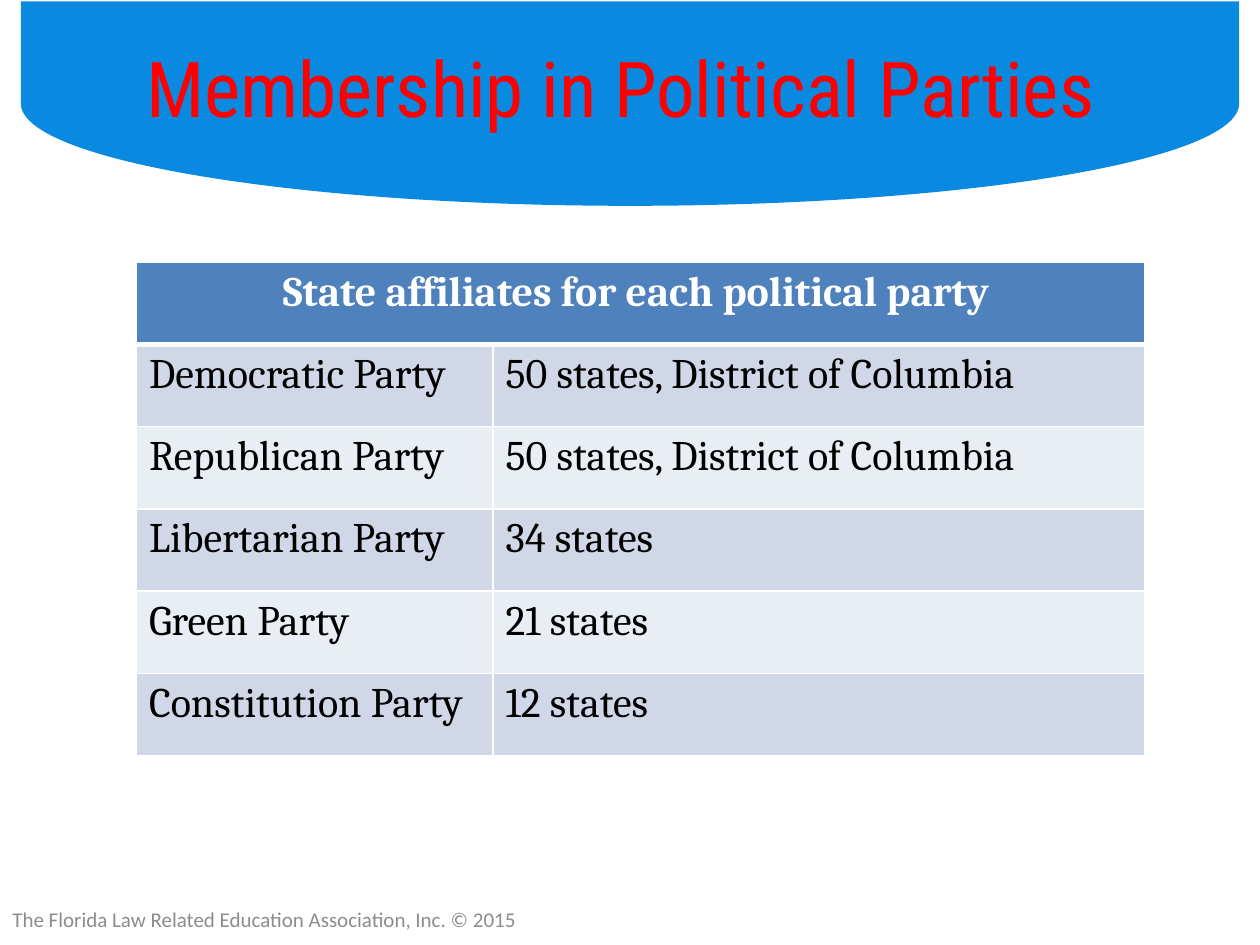
"""Build the slide on state affiliates of each political party."""
from dataclasses import dataclass

from lxml import etree
from pptx import Presentation
from pptx import util as u
from pptx.dml.color import RGBColor
from pptx.enum import shapes, text
from pptx.oxml import ns


@dataclass(frozen=True)
class Theme:
    banner: str = "0A89E0"
    title: str = "FF0000"
    footer: str = "8C8C8C"
    header: str = "4F81BD"
    bands: tuple = ("D0D8E8", "E9EDF4")
    light: str = "FFFFFF"
    dark: str = "000000"
    title_size: int = 44
    table_size: int = 24
    footer_size: int = 12
    title_font: str = "Roboto Condensed"
    table_font: str = "Cambria"
    footer_font: str = "Calibri"


def write(frame, words, font, size, color, align=text.PP_ALIGN.LEFT, bold=False):
    frame.text = words
    frame.word_wrap = True
    paragraph = frame.paragraphs[0]
    paragraph.alignment = align
    for run in paragraph.runs:
        run.font.name = font
        run.font.size = u.Pt(size)
        run.font.bold = bold
        run.font.color.rgb = RGBColor.from_string(color)


def draw_borders(cell, color, **widths):
    properties = cell._tc.get_or_add_tcPr()
    for position, side in enumerate("LRTB"):
        line = etree.Element(ns.qn(f"a:ln{side}"), w=str(u.Pt(widths.get(side, 1))))
        fill = etree.SubElement(line, ns.qn("a:solidFill"))
        etree.SubElement(fill, ns.qn("a:srgbClr"), val=color)
        properties.insert(position, line)


theme = Theme()
affiliates = [
    ("Democratic Party", "50 states, District of Columbia"),
    ("Republican Party", "50 states, District of Columbia"),
    ("Libertarian Party", "34 states"),
    ("Green Party", "21 states"),
    ("Constitution Party", "12 states"),
]

deck = Presentation()
deck.slide_width, deck.slide_height = u.Cm(25.4), u.Cm(19.05)
slide = deck.slides.add_slide(deck.slide_layouts[6])

banner = slide.shapes.add_shape(
    shapes.MSO_SHAPE.FLOWCHART_DELAY, u.Cm(10.64), u.Cm(-10.19), u.Cm(4.12), u.Cm(24.56)
)
banner.rotation = 90
banner.shadow.inherit = False
banner.fill.solid()
banner.fill.fore_color.rgb = RGBColor.from_string(theme.banner)
banner.line.fill.background()

footer = slide.shapes.add_textbox(u.Cm(0), u.Cm(18.01), u.Cm(10.8), u.Cm(1.02)).text_frame
footer.vertical_anchor = text.MSO_ANCHOR.MIDDLE
write(footer, "The Florida Law Related Education Association, Inc. © 2015",
      theme.footer_font, theme.footer_size, theme.footer)

title = slide.shapes.add_textbox(u.Cm(1.27), u.Cm(0.15), u.Cm(22.86), u.Cm(3.18)).text_frame
title.vertical_anchor = text.MSO_ANCHOR.MIDDLE
write(title, "Membership in Political Parties ",
      theme.title_font, theme.title_size, theme.title, text.PP_ALIGN.CENTER)

row_count = len(affiliates) + 1
table = slide.shapes.add_table(
    row_count, 2, u.Cm(2.75), u.Cm(5.28), u.Cm(20.32), u.Cm(1.66 * row_count)
).table
table.columns[0].width, table.columns[1].width = u.Cm(7.19), u.Cm(13.13)

heading = table.cell(0, 0)
heading.merge(table.cell(0, 1))
write(heading.text_frame, "State affiliates for each political party ",
      theme.table_font, theme.table_size, theme.light, text.PP_ALIGN.CENTER, True)
for cell in (heading, table.cell(0, 1)):
    cell.fill.solid()
    cell.fill.fore_color.rgb = RGBColor.from_string(theme.header)
    draw_borders(cell, theme.light, B=3)

for row, affiliate in enumerate(affiliates, 1):
    for column, words in enumerate(affiliate):
        cell = table.cell(row, column)
        write(cell.text_frame, words, theme.table_font, theme.table_size, theme.dark)
        cell.fill.solid()
        cell.fill.fore_color.rgb = RGBColor.from_string(theme.bands[(row - 1) % 2])
        draw_borders(cell, theme.light, T=3 if row == 1 else 1)

deck.save("out.pptx")
